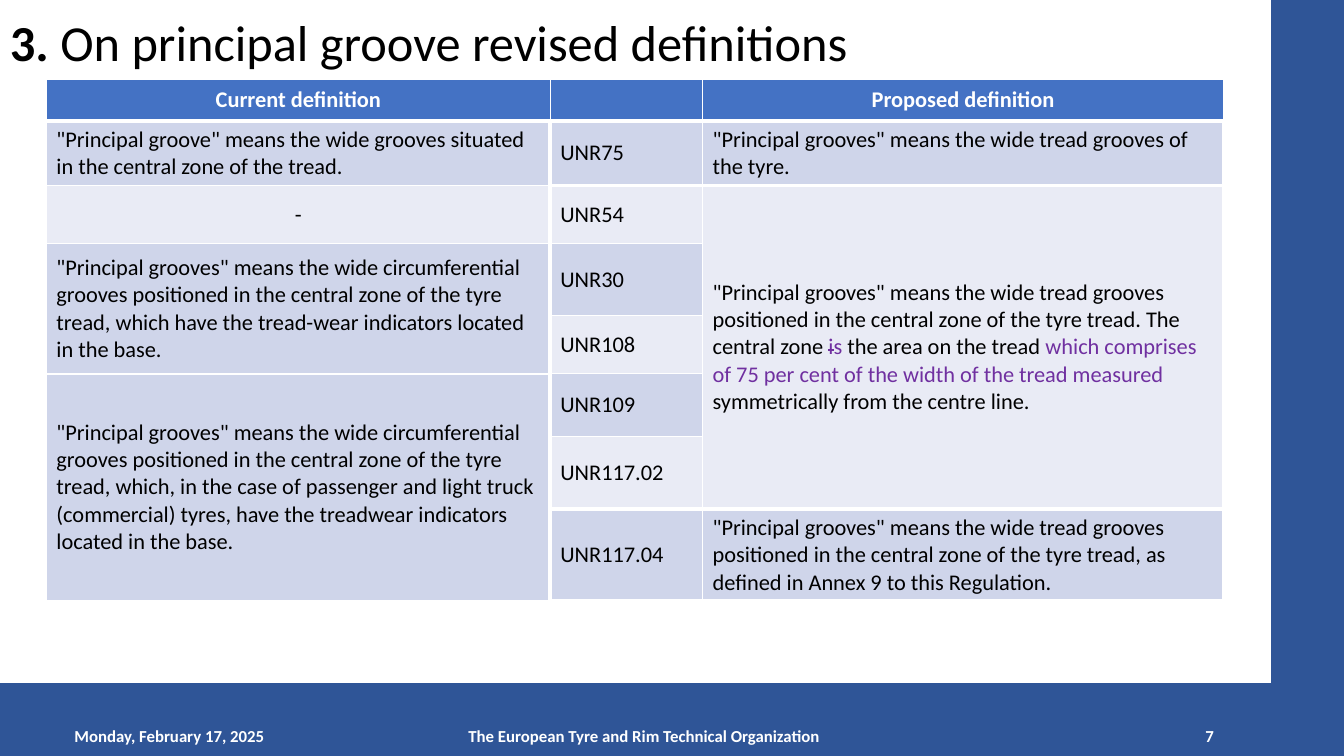
from dataclasses import dataclass
from typing import Any

import lxml.etree
import pptx
import pptx.dml.color
import pptx.enum.shapes
import pptx.enum.text
import pptx.oxml.ns
import pptx.util

ALIGN = pptx.enum.text.PP_ALIGN
MIDDLE = pptx.enum.text.MSO_ANCHOR.MIDDLE
SLIDE_WIDTH, SLIDE_HEIGHT = 13.33, 7.5
GRID_COLUMNS, GRID_ROWS = 40, 30
BAR_BLUE, HEADER_BLUE = "2F5597", "4472C4"
BAND_DARK, BAND_LIGHT = "CFD5EA", "E9EBF5"
WHITE, BLACK, PURPLE = "FFFFFF", "000000", "7030A0"
TABLE_COLUMNS = (15, 4.53, 15.51)
TABLE_ROWS = (1.64, 2.56, 2.32, 2.84, 2.32, 2.48, 2.88, 3.64)
THICK, THIN, HAIR = 3, 1, 0.75


@dataclass(frozen=True)
class Area:
    """A rectangle in grid columns and rows."""
    column: float
    row: float
    columns: float
    rows: float


@dataclass(frozen=True)
class Span:
    text: str
    color: str = BLACK
    bold: bool = False
    strike: bool = False


@dataclass(frozen=True)
class Label:
    area: Area
    spans: tuple[Span, ...]
    size: float = 12
    align: Any = ALIGN.LEFT
    line_spacing: float = 1.0


@dataclass(frozen=True)
class Entry:
    """A table cell; borders are left, top, right and bottom widths in points."""
    row: int
    column: int
    spans: tuple[Span, ...]
    fill: str
    borders: tuple[float, float, float, float]
    align: Any = ALIGN.LEFT
    height: int = 1


BARS = (Area(0, 27.12, 40, 2.88), Area(37.84, 0, 2.16, 30))

LABELS = (
    Label(Area(1.92, 28.4, 9, 1.6), (Span("Monday, February 17, 2025", WHITE, True),)),
    Label(Area(12.42, 28.4, 13.5, 1.6),
          (Span("The European Tyre and Rim Technical Organization", WHITE, True),),
          align=ALIGN.CENTER),
    Label(Area(27.42, 28.4, 9, 1.6), (Span("7", WHITE, True),), align=ALIGN.RIGHT),
    Label(Area(0, 0, 34.5, 3.56),
          (Span("3.", bold=True), Span(" On principal groove revised definitions")),
          size=36, line_spacing=0.9),
)

HEADERS = ("Current definition", "", "Proposed definition")
REGULATIONS = ("UNR75", "UNR54", "UNR30", "UNR108", "UNR109", "UNR117.02", "UNR117.04")
THICK_EDGES = (1, 2, 7, 8)  # rows whose top edge is thick in the regulation column
CURRENT_BORDERS = (THIN, THIN, THICK, THIN)
PROPOSED_BORDERS = (THIN, THICK, THICK, THICK)

DEFINITIONS = (
    Entry(1, 0, (Span('"Principal groove" means the wide grooves situated in the central '
                      'zone of the tread.'),), BAND_DARK, CURRENT_BORDERS),
    Entry(2, 0, (Span("-"),), BAND_LIGHT, CURRENT_BORDERS, ALIGN.CENTER),
    Entry(3, 0, (Span('"Principal grooves" means the wide circumferential grooves positioned '
                      'in the central zone of the tyre tread, which have the tread-wear '
                      'indicators located in the base.'),),
          BAND_DARK, CURRENT_BORDERS, height=2),
    Entry(5, 0, (Span('"Principal grooves" means the wide circumferential grooves positioned '
                      'in the central zone of the tyre tread, which, in the case of passenger '
                      'and light truck (commercial) tyres, have the treadwear indicators '
                      'located in the base.'),),
          BAND_DARK, CURRENT_BORDERS, height=3),
    Entry(1, 2, (Span('"Principal grooves" means the wide tread grooves of the tyre.'),),
          BAND_DARK, PROPOSED_BORDERS),
    Entry(2, 2, (Span('"Principal grooves" means the wide tread grooves positioned in the '
                      'central zone of the tyre tread. The central zone '),
                 Span("i", PURPLE, strike=True), Span("s ", PURPLE),
                 Span("the area on the tread "),
                 Span("which comprises of 75 per cent of the width of the tread measured ",
                      PURPLE),
                 Span("symmetrically from the centre line.")),
          BAND_LIGHT, PROPOSED_BORDERS, height=5),
    Entry(7, 2, (Span('"Principal grooves" means the wide tread grooves positioned in the '
                      'central zone of the tyre tread, as defined in Annex 9 to this '
                      'Regulation.'),), BAND_DARK, PROPOSED_BORDERS),
)


def across(columns: float) -> int:
    return pptx.util.Inches(columns * SLIDE_WIDTH / GRID_COLUMNS)


def down(rows: float) -> int:
    return pptx.util.Inches(rows * SLIDE_HEIGHT / GRID_ROWS)


def place(area: Area) -> tuple[int, int, int, int]:
    return across(area.column), down(area.row), across(area.columns), down(area.rows)


def rgb(color: str) -> pptx.dml.color.RGBColor:
    return pptx.dml.color.RGBColor.from_string(color)


def paint(fill: Any, color: str) -> None:
    fill.solid()
    fill.fore_color.rgb = rgb(color)


def apply(target: Any, values: dict[str, Any]) -> None:
    for name, value in values.items():
        setattr(target, name, value)


def write(paragraph: Any, spans: tuple[Span, ...], size: float) -> None:
    for span in spans:
        run = paragraph.add_run()
        run.text = span.text
        apply(run.font, {"name": "Calibri", "size": pptx.util.Pt(size), "bold": span.bold})
        run.font.color.rgb = rgb(span.color)
        if span.strike:
            run._r.get_or_add_rPr().set("strike", "sngStrike")


def draw_bar(slide: Any, area: Area) -> None:
    bar = slide.shapes.add_shape(pptx.enum.shapes.MSO_SHAPE.RECTANGLE, *place(area))
    bar.shadow.inherit = False
    paint(bar.fill, BAR_BLUE)
    paint(bar.line.fill, BAR_BLUE)
    bar.line.width = pptx.util.Pt(1)


def draw_label(slide: Any, label: Label) -> None:
    frame = slide.shapes.add_textbox(*place(label.area)).text_frame
    apply(frame, {"word_wrap": True, "vertical_anchor": MIDDLE})
    paragraph = frame.paragraphs[0]
    apply(paragraph, {"alignment": label.align, "line_spacing": label.line_spacing})
    write(paragraph, label.spans, label.size)


def add_borders(cell: Any, widths: tuple[float, float, float, float]) -> None:
    properties = cell._tc.get_or_add_tcPr()
    name = pptx.oxml.ns.qn
    for side, width in zip("LTRB", widths):
        line = lxml.etree.SubElement(properties, name(f"a:ln{side}"),
                                     w=str(int(pptx.util.Pt(width))))
        solid = lxml.etree.SubElement(line, name("a:solidFill"))
        lxml.etree.SubElement(solid, name("a:srgbClr"), val=WHITE)


def draw_entry(table: Any, entry: Entry) -> None:
    last_row = entry.row + entry.height - 1
    for row in range(entry.row, last_row + 1):
        cell = table.cell(row, entry.column)
        add_borders(cell, entry.borders)
        paint(cell.fill, entry.fill)
    cell = table.cell(entry.row, entry.column)
    if entry.height > 1:
        cell.merge(table.cell(last_row, entry.column))
    cell.vertical_anchor = MIDDLE
    paragraph = cell.text_frame.paragraphs[0]
    paragraph.alignment = entry.align
    write(paragraph, entry.spans, 16)


def table_entries() -> list[Entry]:
    headers = [Entry(0, column, (Span(text, WHITE, True),) if text else (), HEADER_BLUE,
                     (THIN, THIN, THIN, THICK), ALIGN.CENTER)
               for column, text in enumerate(HEADERS)]
    regulations = []
    for row, text in enumerate(REGULATIONS, start=1):
        top, bottom = (THICK if edge in THICK_EDGES else HAIR for edge in (row, row + 1))
        regulations.append(Entry(row, 1, (Span(text),), BAND_DARK if row % 2 else BAND_LIGHT,
                                 (THICK, top, THIN, bottom)))
    return [*headers, *regulations, *DEFINITIONS]


def draw_table(slide: Any) -> None:
    area = Area(1.38, 3.16, sum(TABLE_COLUMNS), sum(TABLE_ROWS))
    table = slide.shapes.add_table(len(TABLE_ROWS), len(TABLE_COLUMNS), *place(area)).table
    for column, width in zip(table.columns, TABLE_COLUMNS):
        column.width = across(width)
    for row, height in zip(table.rows, TABLE_ROWS):
        row.height = down(height)
    for entry in table_entries():
        draw_entry(table, entry)


def main() -> None:
    presentation = pptx.Presentation()
    apply(presentation, {"slide_width": across(GRID_COLUMNS), "slide_height": down(GRID_ROWS)})
    slide = presentation.slides.add_slide(presentation.slide_layouts[6])
    for bar in BARS:
        draw_bar(slide, bar)
    for label in LABELS:
        draw_label(slide, label)
    draw_table(slide)
    presentation.save("out.pptx")


if __name__ == "__main__":
    main()
